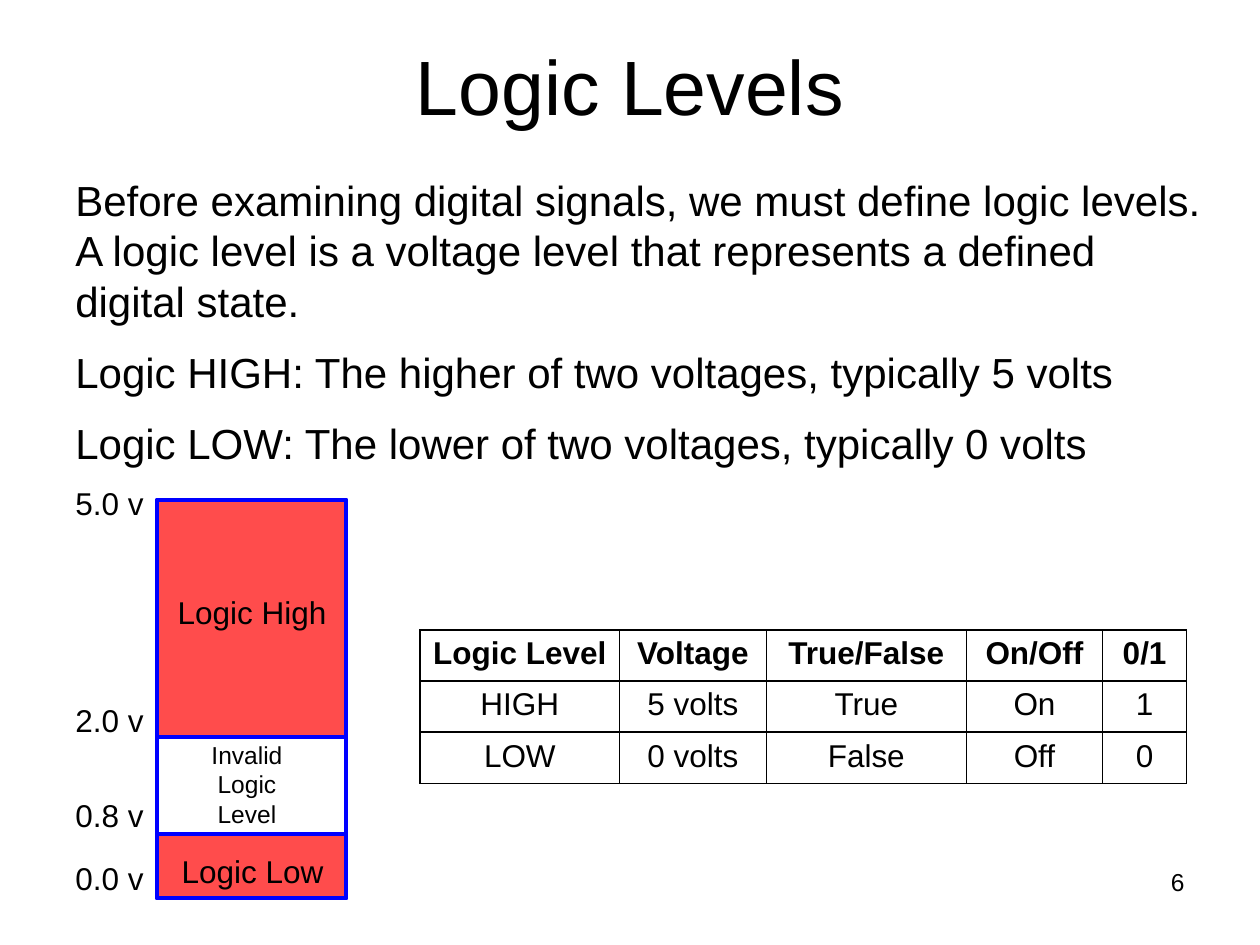
from lxml import etree
from pptx import Presentation
from pptx.dml.color import RGBColor
from pptx.enum.shapes import MSO_SHAPE
from pptx.enum.text import MSO_ANCHOR, MSO_AUTO_SIZE, PP_ALIGN
from pptx.oxml.ns import qn
from pptx.util import Cm, Pt

LEFT, CENTER, RIGHT = PP_ALIGN.LEFT, PP_ALIGN.CENTER, PP_ALIGN.RIGHT
RECTANGLE = MSO_SHAPE.RECTANGLE
MIDDLE = MSO_ANCHOR.MIDDLE
FIT_SHAPE = MSO_AUTO_SIZE.SHAPE_TO_FIT_TEXT
FONT = "Arial"
COLORS = {"text": "000000", "level": "FF0000", "outline": "0000FF", "border": "000000"}

TITLE = "Logic Levels"
BODY = [
    "Before examining digital signals, we must define logic levels. "
    "A logic level is a voltage level that represents a defined digital state.",
    "Logic HIGH: The higher of two voltages, typically 5 volts",
    "Logic LOW: The lower of two voltages, typically 0 volts",
]
PAGE_NUMBER = "6"

# Label and top, in cm
VOLTAGES = [("5.0 v", 9.63), ("2.0 v", 14.01), ("0.8 v", 15.93), ("0.0 v", 17.2)]
# Top, height and whether filled, in cm
BAR_LEFT, BAR_WIDTH = 3.17, 3.81
BAR_PARTS = [(10.08, 4.77, True), (16.81, 1.3, True), (10.08, 8.03, False)]
# Lines, left, top, width, height in cm, and text size
BAR_LABELS = [
    (["Logic Low"], 3.4, 17.05, 3.38, 1.02, 18),
    (["Logic High"], 3.33, 11.84, 3.5, 1.02, 18),
    (["Invalid", "Logic", "Level"], 3.68, 14.79, 2.6, 2.03, 14),
]

TABLE = [
    ["Logic Level", "Voltage", "True/False", "On/Off", "0/1"],
    ["HIGH", "5 volts", "True", "On", "1"],
    ["LOW", "0 volts", "False", "Off", "0"],
]
COLUMN_WIDTHS = [4.02, 2.96, 4.03, 2.75, 1.69]
ROW_HEIGHT = 1.03


def rgb(name):
    return RGBColor.from_string(COLORS[name])


def write(frame, lines, size, align=LEFT, after=0, bold=False):
    for index, line in enumerate(lines):
        para = frame.paragraphs[0] if index == 0 else frame.add_paragraph()
        para.alignment = align
        para.space_after = Pt(after)
        span = para.add_run()
        span.text = line
        span.font.name = FONT
        span.font.size = Pt(size)
        span.font.bold = bold
        span.font.color.rgb = rgb("text")


def add_text(page, lines, place, size, align=LEFT, after=0, wrap=True):
    box = page.shapes.add_textbox(*map(Cm, place))
    box.text_frame.word_wrap = wrap
    if not wrap:
        box.text_frame.auto_size = FIT_SHAPE
    write(box.text_frame, lines, size, align, after)


def add_title(page):
    title = page.shapes.title
    title.left, title.top, title.width, title.height = map(Cm, (0, 0, 25.4, 3.4))
    title.text_frame.vertical_anchor = MIDDLE
    write(title.text_frame, [TITLE], 44, CENTER)


def add_bar_part(page, top, height, filled):
    part = page.shapes.add_shape(
        RECTANGLE, Cm(BAR_LEFT), Cm(top), Cm(BAR_WIDTH), Cm(height))
    part.shadow.inherit = False
    part.line.color.rgb = rgb("outline")
    part.line.width = Pt(2.25)
    if filled:
        part.fill.solid()
        part.fill.fore_color.rgb = rgb("level")
        color = part.fill._xPr.find(qn("a:solidFill") + "/" + qn("a:srgbClr"))
        etree.SubElement(color, qn("a:alpha"), val="70000")
    else:
        part.fill.background()


def set_borders(cell):
    properties = cell._tc.get_or_add_tcPr()
    for position, side in enumerate(("lnL", "lnR", "lnT", "lnB")):
        line = etree.Element(qn("a:" + side), w=str(Pt(1)))
        fill = etree.SubElement(line, qn("a:solidFill"))
        etree.SubElement(fill, qn("a:srgbClr"), val=COLORS["border"])
        properties.insert(position, line)


def add_level_table(page):
    frame = page.shapes.add_table(
        len(TABLE), len(COLUMN_WIDTHS), Cm(8.47), Cm(12.7),
        Cm(sum(COLUMN_WIDTHS)), Cm(ROW_HEIGHT * len(TABLE)))
    table = frame.table
    table.horz_banding = False
    for column, width in zip(table.columns, COLUMN_WIDTHS):
        column.width = Cm(width)
    for row, values in enumerate(TABLE):
        table.rows[row].height = Cm(ROW_HEIGHT)
        for column, value in enumerate(values):
            cell = table.cell(row, column)
            cell.fill.background()
            set_borders(cell)
            write(cell.text_frame, [value], 18, CENTER, bold=row == 0)


def main():
    deck = Presentation()
    deck.slide_width, deck.slide_height = Cm(25.4), Cm(19.05)
    page = deck.slides.add_slide(deck.slide_layouts[5])
    add_title(page)
    add_text(page, BODY, (1.27, 3.39, 23.29, 6.78), 24, after=12)
    add_text(page, [PAGE_NUMBER], (18.21, 17.35, 5.92, 1.32), 14, RIGHT)
    for label, top in VOLTAGES:
        add_text(page, [label], (1.27, top, 1.88, 1.02), 18, wrap=False)
    for part in BAR_PARTS:
        add_bar_part(page, *part)
    for lines, *place, size in BAR_LABELS:
        add_text(page, lines, place, size, CENTER, wrap=False)
    add_level_table(page)
    deck.save("out.pptx")


if __name__ == "__main__":
    main()
